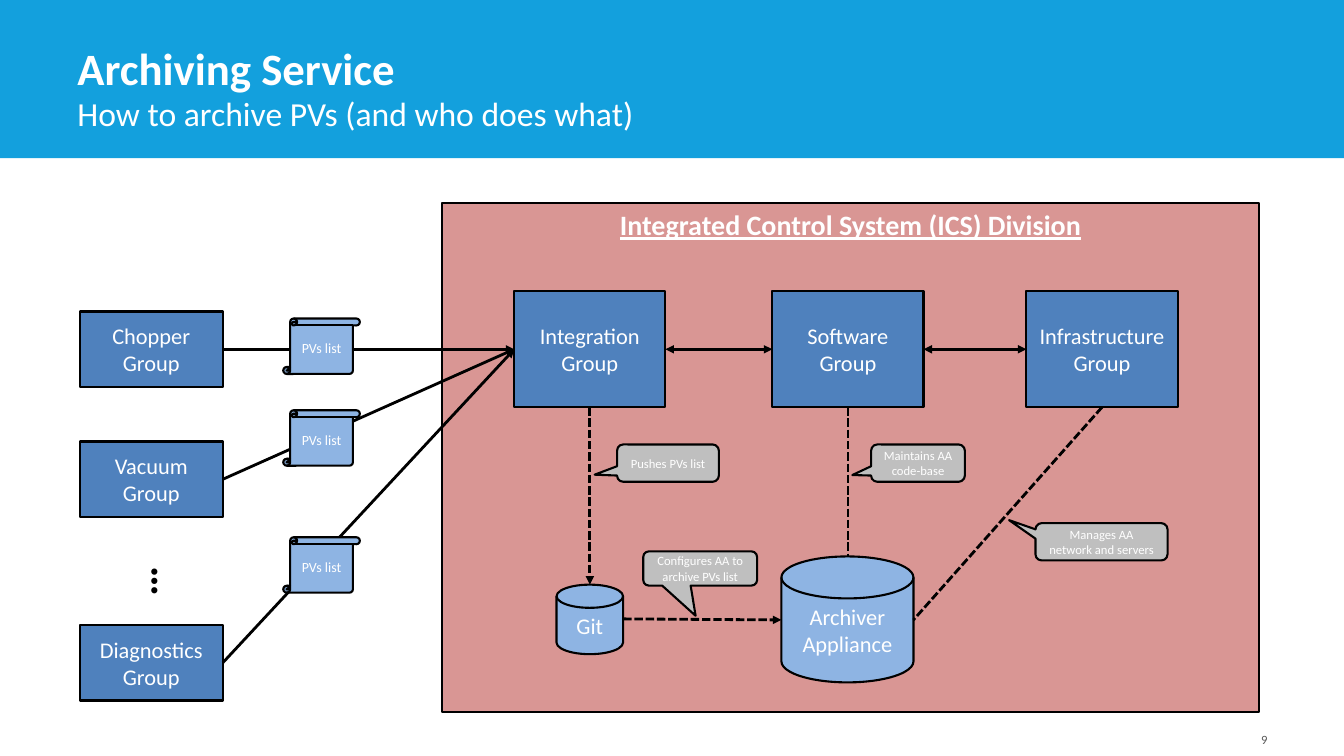
from dataclasses import dataclass

from pptx import Presentation
from pptx.dml.color import RGBColor
from pptx.enum.dml import MSO_LINE
from pptx.enum.shapes import MSO_CONNECTOR, MSO_SHAPE
from pptx.enum.text import MSO_ANCHOR, PP_ALIGN
from pptx.oxml.ns import qn
from pptx.util import Inches, Pt
from lxml.etree import SubElement

TOP, LEFT, BOTTOM, RIGHT = range(4)


@dataclass(frozen=True)
class Theme:
    font: str = "Calibri"
    banner: str = "13A0DD"
    division: str = "D99694"
    group: str = "4F81BD"
    store: str = "8EB4E3"
    note: str = "BFBFBF"
    ink: str = "000000"
    light: str = "FFFFFF"
    muted: str = "595959"
    title_size: int = 32
    dots_size: int = 30
    subtitle_size: int = 24
    heading_size: int = 20
    body_size: int = 16
    list_size: int = 10
    small_size: int = 9
    outline: float = 1.5
    arrow: float = 2


class SlideBuilder:
    def __init__(self, slide, theme):
        self.slide = slide
        self.theme = theme

    def label(self, shape, text, size, color, bold=False, underline=False,
              align=PP_ALIGN.CENTER, anchor=MSO_ANCHOR.MIDDLE, margin=0.1):
        tf = shape.text_frame
        tf.word_wrap = True
        tf.vertical_anchor = anchor
        tf.margin_left = tf.margin_right = Inches(margin)
        tf.margin_top = tf.margin_bottom = Inches(margin / 2)
        for i, line in enumerate(text.split("\n")):
            p = tf.paragraphs[0] if i == 0 else tf.add_paragraph()
            p.alignment = align
            p.add_run().text = line
            p.font.name = self.theme.font
            p.font.size = Pt(size)
            p.font.bold = bold
            p.font.underline = underline
            p.font.color.rgb = RGBColor.from_string(color)

    def text(self, box, text, size, color, **style):
        sp = self.slide.shapes.add_textbox(*map(Inches, box))
        self.label(sp, text, size, color, **style)
        return sp

    def shape(self, kind, box, fill, outlined=True):
        sp = self.slide.shapes.add_shape(kind, *map(Inches, box))
        sp.shadow.inherit = False
        sp.fill.solid()
        sp.fill.fore_color.rgb = RGBColor.from_string(fill)
        if outlined:
            sp.line.color.rgb = RGBColor.from_string(self.theme.ink)
            sp.line.width = Pt(self.theme.outline)
        else:
            sp.line.fill.background()
        return sp

    def group(self, box, text):
        sp = self.shape(MSO_SHAPE.RECTANGLE, box, self.theme.group)
        self.label(sp, text, self.theme.body_size, self.theme.light)
        return sp

    def pv_list(self, top):
        sp = self.shape(MSO_SHAPE.VERTICAL_SCROLL, (2.81, top, 0.76, 0.55), self.theme.store)
        self.label(sp, "PVs list", self.theme.list_size, self.theme.light, margin=0)

    def store(self, box, text):
        sp = self.shape(MSO_SHAPE.FLOWCHART_MAGNETIC_DISK, box, self.theme.store)
        self.label(sp, text, self.theme.body_size, self.theme.light, margin=0.05)

    def callout(self, box, tip, text):
        sp = self.shape(MSO_SHAPE.ROUNDED_RECTANGULAR_CALLOUT, box, self.theme.note)
        sp.adjustments[0], sp.adjustments[1] = tip
        self.label(sp, text, self.theme.small_size, self.theme.light, margin=0.04)

    def connect(self, start, end, dashed=False, head=False, tail=False):
        """Each end is a point in inches or a (rectangle, side) pair."""
        cx = self.slide.shapes.add_connector(MSO_CONNECTOR.STRAIGHT, 0, 0, 0, 0)
        if isinstance(start[0], float):
            cx.begin_x, cx.begin_y = map(Inches, start)
        else:
            cx.begin_connect(*start)
        if isinstance(end[0], float):
            cx.end_x, cx.end_y = map(Inches, end)
        else:
            cx.end_connect(*end)
        cx.line.color.rgb = RGBColor.from_string(self.theme.ink)
        cx.line.width = Pt(self.theme.arrow)
        if dashed:
            cx.line.dash_style = MSO_LINE.SQUARE_DOT
        ln = cx._element.spPr.find(qn("a:ln"))
        for wanted, tag in ((head, "a:headEnd"), (tail, "a:tailEnd")):
            if wanted:
                SubElement(ln, qn(tag), type="triangle")
        SubElement(cx._element.spPr, qn("a:effectLst"))


def main():
    prs = Presentation()
    prs.slide_width, prs.slide_height = Inches(13.33), Inches(7.5)
    th = Theme()
    s = SlideBuilder(prs.slides.add_slide(prs.slide_layouts[6]), th)

    # Banner, titles and page number
    s.shape(MSO_SHAPE.RECTANGLE, (0, 0, 13.33, 1.57), th.banner, outlined=False)
    s.text((0.67, 0.38, 10.41, 0.61), "Archiving Service", th.title_size, th.light,
           bold=True, align=PP_ALIGN.LEFT, anchor=MSO_ANCHOR.BOTTOM)
    s.text((0.67, 0.87, 10.41, 0.65), "How to archive PVs (and who does what)",
           th.subtitle_size, th.light, align=PP_ALIGN.LEFT, anchor=MSO_ANCHOR.TOP)
    s.text((9.56, 7.06, 3.11, 0.4), "9", th.small_size, th.muted,
           align=PP_ALIGN.RIGHT, anchor=MSO_ANCHOR.BOTTOM)

    # Division with its three groups
    division = s.shape(MSO_SHAPE.RECTANGLE, (4.38, 2.01, 8.11, 5.05), th.division)
    s.label(division, "Integrated Control System (ICS) Division", th.heading_size,
            th.light, bold=True, underline=True, anchor=MSO_ANCHOR.TOP)
    integration, software, infrastructure = [
        s.group((left, 2.89, 1.5, 1.15), text)
        for left, text in ((5.1, "Integration\nGroup"), (7.66, "Software\nGroup"),
                           (10.18, "Infrastructure Group"))]
    for a, b in ((integration, software), (software, infrastructure)):
        s.connect((a, RIGHT), (b, LEFT), head=True, tail=True)

    # Client groups, each handing over a list of PVs
    for top, name in ((3.09, "Chopper"), (4.38, "Vacuum"), (6.2, "Diagnostics")):
        client = s.group((0.79, top, 1.42, 0.75), f"{name}\nGroup")
        s.connect((client, RIGHT), (integration, LEFT), tail=True)
    for top in (3.16, 4.07, 5.33):
        s.pv_list(top)
    dots = s.text((1.33, 5.52, 0.64, 0.51), "…", th.dots_size, th.ink, bold=True,
                  align=PP_ALIGN.LEFT, anchor=MSO_ANCHOR.TOP)
    dots.text_frame._txBody.bodyPr.set("vert", "vert")

    # Stores and the work done on them
    s.store((5.52, 5.8, 0.66, 0.69), "Git")
    s.store((7.75, 5.52, 1.31, 1.25), "Archiver Appliance")
    s.connect((integration, BOTTOM), (5.85, 5.8), dashed=True, tail=True)
    s.connect((software, BOTTOM), (8.41, 5.52), dashed=True)
    s.connect((infrastructure, BOTTOM), (9.06, 6.15), dashed=True)

    # Callouts
    for box, tip, text in (
            ((6.12, 4.41, 1.01, 0.37), (-0.72, 0.31), "Pushes PVs list"),
            ((8.64, 4.41, 0.93, 0.37), (-0.7, 0.32), "Maintains AA code-base"),
            ((10.27, 5.19, 1.31, 0.37), (-0.7, -0.58), "Manages AA\nnetwork and servers"),
            ((6.38, 5.47, 1.13, 0.34), (-0.04, 1.38), "Configures AA to archive PVs list")):
        s.callout(box, tip, text)
    s.connect((6.18, 6.14), (7.75, 6.15), dashed=True, tail=True)

    prs.save("out.pptx")


if __name__ == "__main__":
    main()
